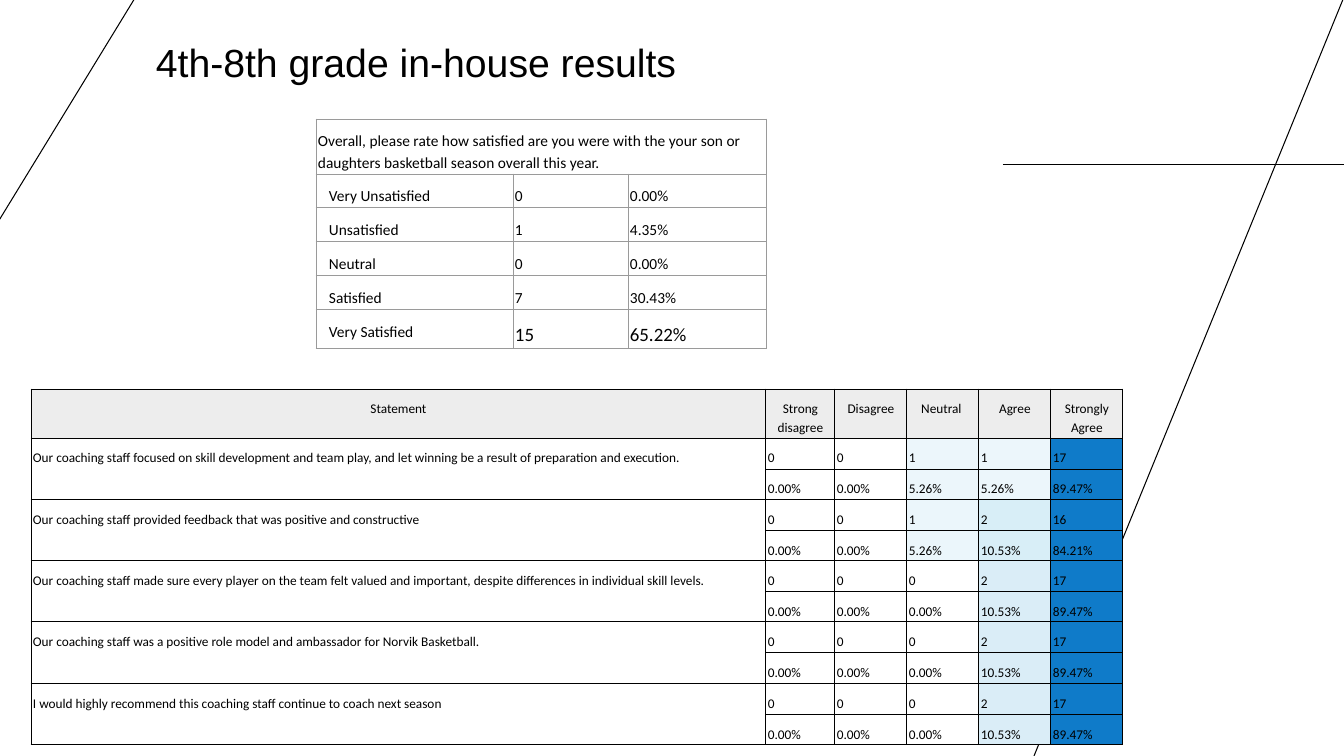
from lxml.etree import SubElement
from pptx import Presentation
from pptx.dml.color import RGBColor as Color
from pptx.enum.shapes import MSO_CONNECTOR as Connector
from pptx.enum.text import MSO_ANCHOR as Anchor, PP_ALIGN as Align
from pptx.oxml.ns import qn
from pptx.util import Emu, Pt

# Content
TITLE = "4th-8th grade in-house results"
QUESTION = ("Overall, please rate how satisfied are you were with the your son or "
            "daughters basketball season overall this year.")
RATINGS = [("Very Unsatisfied", 0), ("Unsatisfied", 1), ("Neutral", 0),
           ("Satisfied", 7), ("Very Satisfied", 15)]
HEADINGS = ["Statement", "Strong disagree", "Disagree", "Neutral ", "Agree", "Strongly Agree"]
STATEMENTS = [  # statement, answers, fills of the Neutral and Agree cells
    ("Our coaching staff focused on skill development and team play, and let winning "
     "be a result of preparation and execution.", (0, 0, 1, 1, 17), ("ECF6FB", "ECF6FB")),
    ("Our coaching staff provided feedback that was positive and constructive",
     (0, 0, 1, 2, 16), ("EBF6FB", "D8EEF7")),
    ("Our coaching staff made sure every player on the team felt valued and important, "
     "despite differences in individual skill levels.", (0, 0, 0, 2, 17), (None, "DAEDF7")),
    ("Our coaching staff was a positive role model and ambassador for Norvik Basketball.",
     (0, 0, 0, 2, 17), (None, "DAEDF7")),
    ("I would highly recommend this coaching staff continue to coach next season",
     (0, 0, 0, 2, 17), (None, "DAEDF7")),
]

# Layout in px
PAGE = (1344, 756)
LINES = [(1003, 165, 1344, 165), (1344, -3, 1034, 756), (-2, 222, 135, -2)]
TITLE_BOX = (146, 29, 803, 62)
RATING_AT, RATING_COLUMNS, RATING_ROWS = (316, 119), [197, 115, 139], [55] + [34] * 4 + [39]
SURVEY_AT, SURVEY_COLUMNS = (31, 389), [735, 69] + [72] * 4
SURVEY_ROWS = [49] + [31, 30] * len(STATEMENTS)
CELL_MARGINS = {"margin_left": 2, "margin_top": 10, "margin_right": 2, "margin_bottom": 2}
INDENT = 11

THEME = {
    "ink": "000000", "rating_border": "9A9A9A", "survey_border": "000000",
    "heading_fill": "EDEDED", "strong_fill": "0F7BC9",
    "title_font": "Arial", "table_font": "Calibri",
    "title_size": 28, "rating_size": 11, "top_size": 13.5, "survey_size": 9.5,
    "line_width": 0.75,
}


def px(length):
    return Emu(round(length * 914400 / 100.8))


def write(frame, text, font, size, spacing, align=Align.LEFT):
    para = frame.paragraphs[0]
    para.alignment, para.line_spacing = align, spacing
    span = para.add_run()
    span.text = text
    for name, value in {"name": font, "size": Pt(size), "bold": False}.items():
        setattr(span.font, name, value)
    span.font.color.rgb = Color.from_string(THEME["ink"])
    return para


def add_grid(page, at, columns, rows, border):
    frame = page.shapes.add_table(len(rows), len(columns),
                                  *map(px, (*at, sum(columns), sum(rows))))
    table = frame.table
    table.first_row = table.horz_banding = False
    for column, width in zip(table.columns, columns):
        column.width = px(width)
    for row, height in zip(table.rows, rows):
        row.height = px(height)
    for cell in table.iter_cells():
        properties = cell._tc.get_or_add_tcPr()
        for side in ("a:lnL", "a:lnR", "a:lnT", "a:lnB"):
            edge = SubElement(properties, qn(side), w=str(Pt(THEME["line_width"])))
            solid = SubElement(edge, qn("a:solidFill"))
            SubElement(solid, qn("a:srgbClr"), val=border)
        for name, value in CELL_MARGINS.items():
            setattr(cell, name, px(value))
        cell.fill.background()
    return table


def fill_cell(cell, text, size, fill=None, align=Align.LEFT):
    if fill:
        cell.fill.solid()
        cell.fill.fore_color.rgb = Color.from_string(fill)
    return write(cell.text_frame, text, THEME["table_font"], size, 1.15, align)


def add_lines(page):
    for ends in LINES:
        line = page.shapes.add_connector(Connector.STRAIGHT, *map(px, ends))
        line.line.color.rgb = Color.from_string(THEME["ink"])
        line.line.width = Pt(THEME["line_width"])
        SubElement(line._element.spPr, qn("a:effectLst"))


def add_title(page):
    frame = page.shapes.add_textbox(*map(px, TITLE_BOX)).text_frame
    frame.word_wrap, frame.vertical_anchor = True, Anchor.BOTTOM
    write(frame, TITLE, THEME["title_font"], THEME["title_size"], 0.9)


def add_ratings(page):
    table = add_grid(page, RATING_AT, RATING_COLUMNS, RATING_ROWS, THEME["rating_border"])
    table.cell(0, 0).merge(table.cell(0, len(RATING_COLUMNS) - 1))
    size = THEME["rating_size"]
    fill_cell(table.cell(0, 0), QUESTION, size)
    total = sum(count for _, count in RATINGS)
    highest = max(count for _, count in RATINGS)
    for row, (label, count) in enumerate(RATINGS, 1):
        para = fill_cell(table.cell(row, 0), label, size)
        para._p.get_or_add_pPr().set("indent", str(px(INDENT)))
        value_size = THEME["top_size"] if count == highest else size
        for column, text in enumerate((str(count), f"{count / total:.2%}"), 1):
            fill_cell(table.cell(row, column), text, value_size)


def add_survey(page):
    table = add_grid(page, SURVEY_AT, SURVEY_COLUMNS, SURVEY_ROWS, THEME["survey_border"])
    size = THEME["survey_size"]
    for column, heading in enumerate(HEADINGS):
        fill_cell(table.cell(0, column), heading, size, THEME["heading_fill"], Align.CENTER)
    for index, (statement, counts, tints) in enumerate(STATEMENTS):
        row = 1 + 2 * index
        table.cell(row, 0).merge(table.cell(row + 1, 0))
        fill_cell(table.cell(row, 0), statement, size)
        fills = (None, None, *tints, THEME["strong_fill"])
        for column, (count, fill) in enumerate(zip(counts, fills), 1):
            fill_cell(table.cell(row, column), str(count), size, fill)
            fill_cell(table.cell(row + 1, column), f"{count / sum(counts):.2%}", size, fill)


def main():
    deck = Presentation()
    deck.slide_width, deck.slide_height = map(px, PAGE)
    page = deck.slides.add_slide(deck.slide_layouts[6])
    add_lines(page)
    add_title(page)
    add_ratings(page)
    add_survey(page)
    deck.save("out.pptx")


if __name__ == "__main__":
    main()
